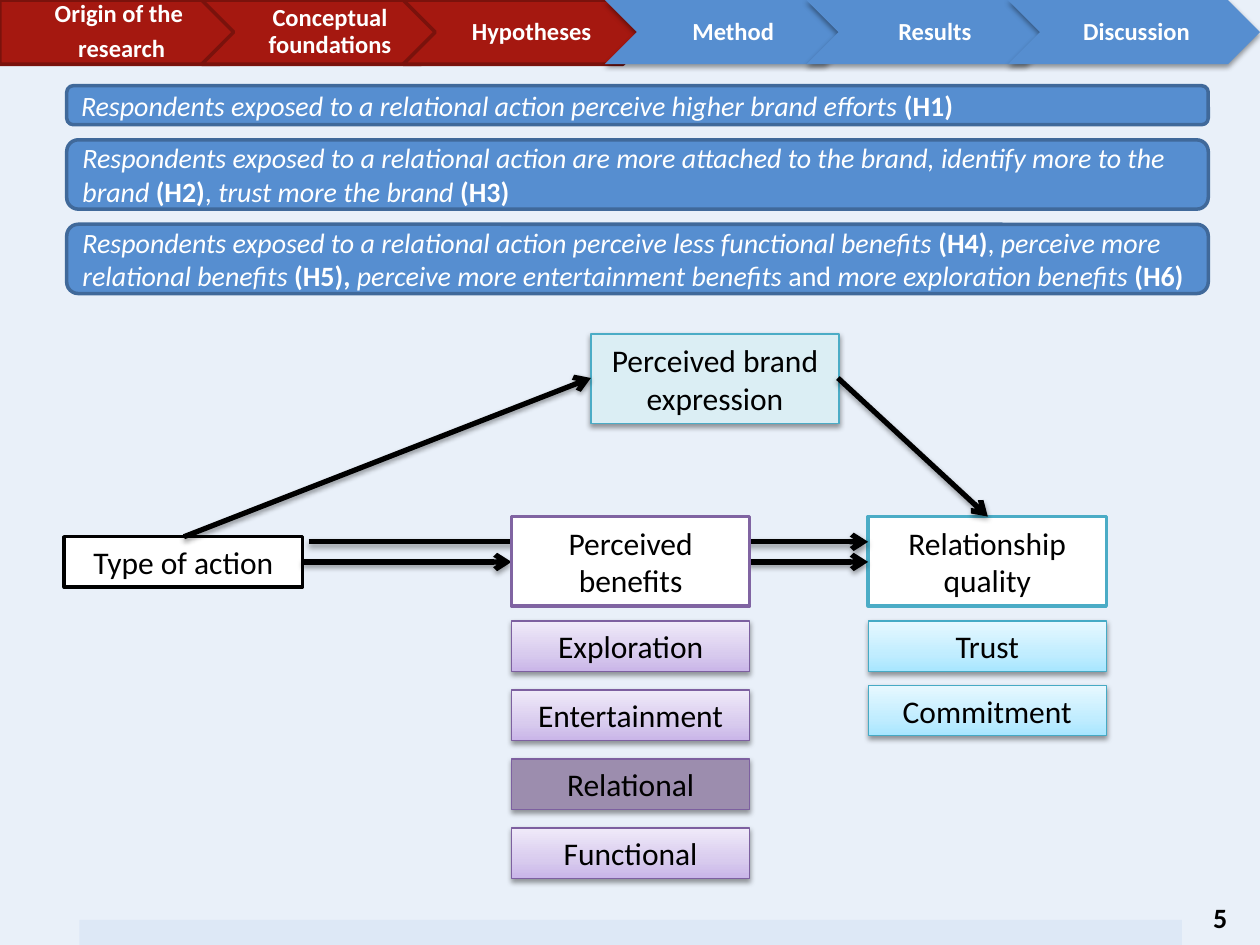
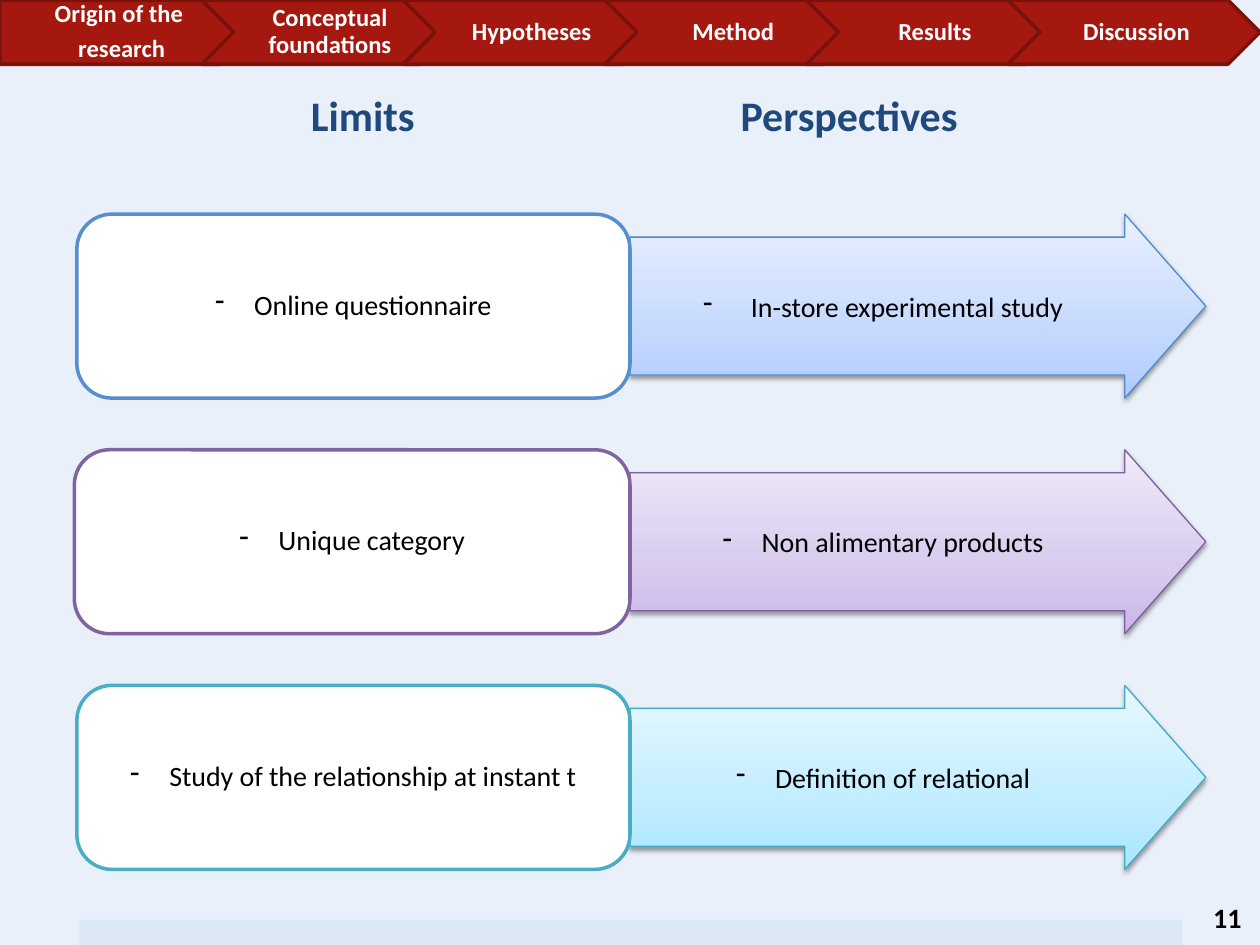
import copy
from dataclasses import dataclass

import pptx
import pptx.dml.color
import pptx.enum.shapes
import pptx.enum.text
import pptx.oxml.ns
import pptx.util
from lxml import etree

Inches = pptx.util.Inches
qn = pptx.oxml.ns.qn
Preset = pptx.enum.shapes.MSO_SHAPE
Align = pptx.enum.text.PP_ALIGN
Anchor = pptx.enum.text.MSO_ANCHOR


@dataclass(frozen=True)
class Theme:
    font: str = "Calibri"
    black: str = "000000"
    white: str = "FFFFFF"
    background: str = "E9F0F9"
    band: str = "DDE8F6"
    red: str = "A51810"
    dark_red: str = "7A120C"
    blue: str = "568ED0"
    dark_blue: str = "40699A"
    blue_edge: str = "518BCE"
    heading: str = "1F497D"
    purple: str = "8064A2"
    purple_edge: str = "7D60A0"
    muted_purple: str = "9C8DAE"
    cyan: str = "4BACC6"
    cyan_edge: str = "46AAC5"
    pale_cyan: str = "DBEEF4"
    # Gradients run from the bottom to the top
    blue_gradient: tuple = ("ADCAFF", "C5D9FF", "E9F0FF")
    purple_gradient: tuple = ("C9B5E8", "D8CBEE", "F0EAF9")
    cyan_gradient: tuple = ("A7E6FF", "C1EDFF", "E7F8FF")
    gradient_positions: tuple = (0, 0.35, 1)
    step_size: int = 14
    body_size: int = 16
    box_size: int = 18
    heading_size: int = 24
    thin: float = 0.75
    border: float = 2
    arrow: float = 3


THEME = Theme()
STEPS = [["Origin of the ", "research"], "Conceptual foundations", "Hypotheses",
         "Method", "Results", "Discussion"]


def rgb(color):
    return pptx.dml.color.RGBColor.from_string(color)


def write_text(frame, text, size=THEME.box_size, color=THEME.black, bold=False,
               align=Align.CENTER, anchor=Anchor.MIDDLE, margins=None,
               spacing=None, after=0, bullet=None, indent=0.31, wrap=True):
    """Fill a frame; a paragraph is a string or a list of (text, style) runs."""
    frame.word_wrap = wrap
    frame.vertical_anchor = anchor
    if margins:
        (frame.margin_left, frame.margin_top,
         frame.margin_right, frame.margin_bottom) = map(Inches, margins)
    paragraphs = text if isinstance(text, list) else [text]
    for index, content in enumerate(paragraphs):
        paragraph = frame.add_paragraph() if index else frame.paragraphs[0]
        paragraph.alignment = align
        paragraph.space_before = pptx.util.Pt(0)
        paragraph.space_after = pptx.util.Pt(after)
        if spacing:
            paragraph.line_spacing = spacing
        if bullet:
            properties = paragraph._p.get_or_add_pPr()
            properties.set("marL", str(Inches(indent)))
            properties.set("indent", str(-Inches(indent)))
            etree.SubElement(properties, qn("a:buChar"), char=bullet)
        runs = [(content, "")] if isinstance(content, str) else content
        for words, style in runs:
            run = paragraph.add_run()
            run.text = words
            run.font.name = THEME.font
            run.font.size = pptx.util.Pt(size)
            run.font.color.rgb = rgb(color)
            run.font.bold = bold or style == "bold"
            run.font.italic = style == "italic"


def add_shadow(effects):
    """Put a soft shadow, cast downwards, into an effect list."""
    shadow = etree.SubElement(
        effects, qn("a:outerShdw"), blurRad=str(pptx.util.Pt(3.1)),
        dist=str(pptx.util.Pt(1.6)), dir="5400000", rotWithShape="0")
    color = etree.SubElement(shadow, qn("a:srgbClr"), val=THEME.black)
    etree.SubElement(color, qn("a:alpha"), val="38000")


class Deck:
    """Holds the presentation, its style and the current slide."""

    def __init__(self, theme):
        self.theme = theme
        self.presentation = pptx.Presentation()
        self.presentation.slide_width = Inches(10)
        self.presentation.slide_height = Inches(7.5)
        fill = self.presentation.slide_master.background.fill
        fill.solid()
        fill.fore_color.rgb = rgb(theme.background)
        self.slide = None

    def new_slide(self, layout_name, number):
        layout = self.presentation.slide_layouts.get_by_name(layout_name)
        self.slide = self.presentation.slides.add_slide(layout)
        self.box(0.63, 7.3, 8.75, 0.2, fill=self.theme.band)
        label = self.slide.shapes.add_textbox(*map(Inches, (9.53, 7.1, 0.59, 0.4)))
        write_text(label.text_frame, str(number), size=self.theme.body_size,
                   bold=True, align=Align.LEFT, anchor=Anchor.TOP)

    def box(self, left, top, width, height, text=None, preset=Preset.RECTANGLE,
            fill=THEME.white, line=None, weight=THEME.border, shadow=False,
            adjustments=(), **text_format):
        shape = self.slide.shapes.add_shape(
            preset, *map(Inches, (left, top, width, height)))
        for index, value in enumerate(adjustments):
            shape.adjustments[index] = value
        if isinstance(fill, tuple):
            self.gradient(shape, fill)
        else:
            shape.fill.solid()
            shape.fill.fore_color.rgb = rgb(fill)
        if line:
            shape.line.color.rgb = rgb(line)
            shape.line.width = pptx.util.Pt(weight)
        else:
            shape.line.fill.background()
        shape.shadow.inherit = False
        if shadow:
            add_shadow(shape._element.spPr.find(qn("a:effectLst")))
        if text:
            write_text(shape.text_frame, text, **text_format)

    def gradient(self, shape, colors):
        shape.fill.gradient()
        shape.fill.gradient_angle = 90
        stops = shape._element.spPr.find(".//" + qn("a:gsLst"))
        stops.insert(1, copy.deepcopy(stops[0]))
        for stop, position, color in zip(
                shape.fill.gradient_stops, self.theme.gradient_positions, colors):
            stop.position = position
            stop.color.rgb = rgb(color)

    def arrow(self, *ends):
        connector = self.slide.shapes.add_connector(
            pptx.enum.shapes.MSO_CONNECTOR.STRAIGHT, *map(Inches, ends))
        connector.line.color.rgb = rgb(self.theme.black)
        connector.line.width = pptx.util.Pt(self.theme.arrow)
        properties = connector._element.spPr
        etree.SubElement(properties.find(qn("a:ln")), qn("a:tailEnd"), type="arrow")
        add_shadow(etree.SubElement(properties, qn("a:effectLst")))

    def heading(self, index, text, left, top, width, height):
        shape = self.slide.placeholders[index]
        shape.left, shape.top, shape.width, shape.height = map(
            Inches, (left, top, width, height))
        write_text(shape.text_frame, text, size=self.theme.heading_size, bold=True,
                   color=self.theme.heading, wrap=False)

    def remove_empty_placeholders(self):
        for shape in list(self.slide.placeholders):
            if not shape.has_text_frame or not shape.text_frame.text:
                shape._element.getparent().remove(shape._element)

    def progress(self, done):
        """Row of steps: those done are red, the others blue."""
        theme = self.theme
        for index, step in enumerate(STEPS):
            first, reached = index == 0, index < done
            self.box(1.6 * index, 0, 2, 0.51, step,
                     preset=Preset.PENTAGON if first else Preset.CHEVRON,
                     fill=theme.red if reached else theme.blue,
                     line=theme.dark_red if reached else None,
                     shadow=not reached, size=theme.step_size, color=theme.white,
                     bold=True, spacing=0.9, after=4.9,
                     margins=(0.08 if first else 0.06, 0.04, 0.02, 0.04))


def build_hypotheses(deck):
    theme = deck.theme
    deck.new_slide("Blank", 5)
    column_width, benefits_left, quality_left = 1.89, 4.06, 6.89

    # Research model: action, quality and their components
    deck.box(0.51, 4.26, column_width, 0.4, "Type of action", line=theme.black)
    deck.box(quality_left, 4.1, column_width, 0.71, "Relationship quality",
             line=theme.cyan)
    columns = [
        (benefits_left, 0.547, theme.purple_gradient, theme.purple_edge,
         ["Exploration", "Entertainment", "Relational", "Functional"]),
        (quality_left, 0.51, theme.cyan_gradient, theme.cyan_edge,
         ["Trust", "Commitment"]),
    ]
    for left, pitch, gradient, edge, components in columns:
        for row, component in enumerate(components):
            fill = theme.muted_purple if component == "Relational" else gradient
            deck.box(left, 4.93 + pitch * row, column_width, 0.4, component,
                     fill=fill, line=edge, weight=theme.thin, shadow=True)

    # Direct effects pass behind the benefits box
    for start, end, height in [(2.4, benefits_left, 4.46),
                               (5.94, quality_left, 4.46),
                               (2.45, quality_left, 4.3)]:
        deck.arrow(start, height, end, height)
    deck.box(benefits_left, 4.1, column_width, 0.71, "Perceived benefits",
             line=theme.purple)

    # Effects through brand expression
    deck.box(4.69, 2.65, 1.97, 0.71, "Perceived brand expression",
             fill=theme.pale_cyan, line=theme.cyan, weight=theme.thin, shadow=True)
    deck.arrow(1.46, 4.26, 4.69, 3)
    deck.arrow(6.65, 3, 7.84, 4.1)

    # Hypotheses
    exposed = "Respondents exposed to a relational action "
    hypotheses = [
        (0.68, 0.31, [(exposed + "perceive higher brand efforts ", "italic"),
                      ("(H1)", "bold")]),
        (1.11, 0.55, [(exposed + "are more attached to the brand, "
                       "identify more to the brand ", "italic"),
                      ("(H2)", "bold"), (", ", ""),
                      ("trust more the brand ", "italic"), ("(H3)", "bold")]),
        (1.78, 0.55, [(exposed + "perceive less functional benefits ", "italic"),
                      ("(H4)", "bold"), (", ", ""),
                      ("perceive more relational benefits ", "italic"),
                      ("(H5), ", "bold"),
                      ("perceive more entertainment benefits ", "italic"),
                      ("and ", ""), ("more exploration benefits ", "italic"),
                      ("(H6)", "bold")]),
    ]
    for top, height, runs in hypotheses:
        deck.box(0.53, top, 9.06, height, [runs], preset=Preset.ROUNDED_RECTANGLE,
                 fill=theme.blue, line=theme.dark_blue, size=theme.body_size,
                 color=theme.white, align=Align.LEFT)
    deck.progress(done=3)


def build_discussion(deck):
    theme = deck.theme
    deck.new_slide("Comparison", 11)

    # Each limit leads to a perspective
    rows = [
        (0.61, "Online questionnaire", theme.blue, "In-store experimental study",
         theme.blue_gradient, theme.blue_edge, 0.38),
        (0.59, "Unique category", theme.purple, "Non alimentary products",
         theme.purple_gradient, theme.purple_edge, 0.31),
        (0.61, "Study of the relationship at instant t", theme.cyan,
         "Definition of relational", theme.cyan_gradient, theme.cyan_edge, 0.31),
    ]
    middle, height = 5, 1.46
    for index, (left, limit, border, perspective, gradient, edge,
                indent) in enumerate(rows):
        top = 1.7 + 1.87 * index
        deck.box(middle, top, 4.57, height, perspective, preset=Preset.RIGHT_ARROW,
                 adjustments=(0.75, 0.44), fill=gradient, line=edge,
                 weight=theme.thin, shadow=True, size=theme.body_size, bullet="-",
                 indent=indent, margins=(0.01, 0.01, 0.08, 0.01))
        deck.box(left, top, middle - left, height, limit,
                 preset=Preset.ROUNDED_RECTANGLE, adjustments=(0.19,), line=border,
                 size=theme.body_size, bullet="-", spacing=0.9,
                 margins=(0.05, 0.05, 0.05, 0.05))

    # Column headings
    deck.heading(1, "Limits", 2.28, 0.66, 1.2, 0.5)
    deck.heading(3, "Perspectives", 5.76, 0.66, 1.96, 0.5)
    deck.remove_empty_placeholders()
    deck.progress(done=len(STEPS))


def main():
    deck = Deck(THEME)
    build_hypotheses(deck)
    build_discussion(deck)
    deck.presentation.save("out.pptx")


if __name__ == "__main__":
    main()
